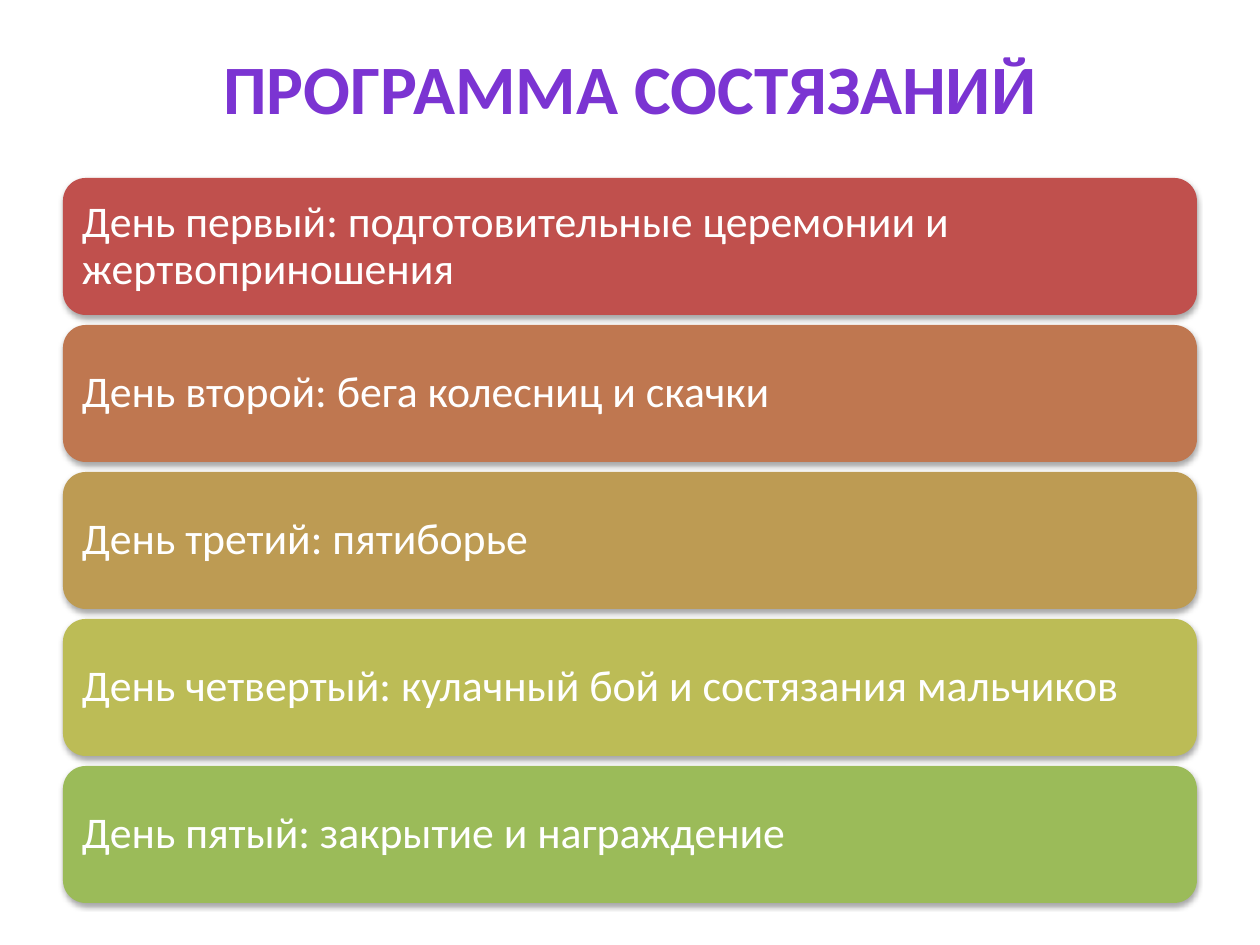
from lxml import etree
from pptx import Presentation
from pptx import util as u
from pptx.dml.color import RGBColor
from pptx.enum import shapes, text
from pptx.oxml.ns import qn

PX = u.Inches(1) / 126
FONT = "Calibri"
DAYS = [
    ("День первый: подготовительные церемонии и жертвоприношения", "C0504D"),
    ("День второй: бега колесниц и скачки", "BF7750"),
    ("День третий: пятиборье", "BD9B53"),
    ("День четвертый: кулачный бой и состязания мальчиков", "BCBC56"),
    ("День пятый: закрытие и награждение", "9BBB59"),
]


def px(n):
    return u.Emu(round(n * PX))


def color(value):
    return RGBColor.from_string(value)


def write(s, words, size, hue, align, bold=False):
    tf = s.text_frame
    tf.word_wrap = True
    tf.vertical_anchor = text.MSO_ANCHOR.MIDDLE
    tf.text = words
    p = tf.paragraphs[0]
    p.alignment = align
    font = p.runs[0].font
    font.name, font.size, font.bold = FONT, u.Pt(size), bold
    font.color.rgb = color(hue)
    return tf


def add_shadow(s):
    s.shadow.inherit = False
    effects = s._element.spPr.find(qn("a:effectLst"))
    shadow = etree.SubElement(effects, qn("a:outerShdw"), blurRad="40000",
                              dist="23000", dir="5400000", rotWithShape="0")
    black = etree.SubElement(shadow, qn("a:srgbClr"), val="000000")
    etree.SubElement(black, qn("a:alpha"), val="35000")


def add_title(slide, left, top, width, height):
    s = slide.shapes.add_textbox(px(left), px(top), px(width), px(height))
    write(s, "ПРОГРАММА СОСТЯЗАНИЙ", 39.6, "7B34D2", text.PP_ALIGN.CENTER, True)


def add_days(slide, left, top, width, height, gap=10):
    bar_height = (height - gap * (len(DAYS) - 1)) // len(DAYS)
    for i, (words, fill) in enumerate(DAYS):
        s = slide.shapes.add_shape(
            shapes.MSO_SHAPE.ROUNDED_RECTANGLE, px(left),
            px(top + i * (bar_height + gap)), px(width), px(bar_height))
        s.fill.solid()
        s.fill.fore_color.rgb = color(fill)
        s.line.fill.background()
        add_shadow(s)
        tf = write(s, words, 25, "FFFFFF", text.PP_ALIGN.LEFT)
        tf.margin_left = tf.margin_right = u.Inches(0.1)
        tf.margin_top = tf.margin_bottom = u.Inches(0.1)
        tf.paragraphs[0].line_spacing = 0.9


def main():
    prs = Presentation()
    prs.slide_width, prs.slide_height = px(1260), px(945)
    slide = prs.slides.add_slide(prs.slide_layouts[6])
    # Heading
    add_title(slide, 63, 38, 1134, 97)
    # One bar per day
    add_days(slide, 63, 178, 1134, 725)
    prs.save("out.pptx")


if __name__ == "__main__":
    main()
